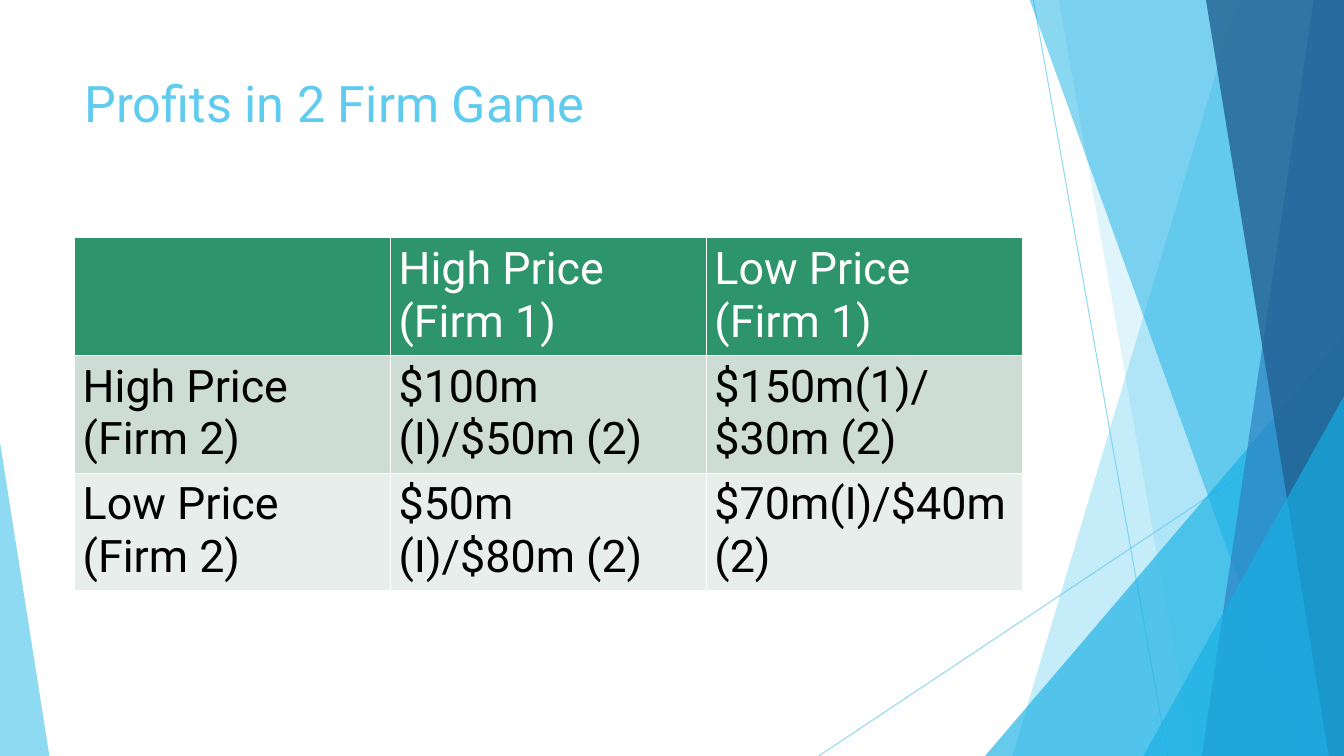
from pptx import Presentation
from pptx.dml.color import RGBColor
from pptx.enum.shapes import MSO_CONNECTOR as CONN, MSO_SHAPE as SHAPE
from pptx.enum.text import MSO_ANCHOR as ANCHOR
from pptx.oxml.ns import qn
from pptx.util import Inches, Pt
from lxml.etree import SubElement

COLORS = {
    "sky": "5FCBEF", "cyan": "17B0E4", "blue": "2E83C3", "navy": "226292",
    "header": "2E946B", "band_dark": "CDDCD4", "band_light": "E8EEEB",
    "white": "FFFFFF", "black": "000000",
}
FONT = "Roboto"
SLIDE_W, SLIDE_H = 13.33, 7.5

RAYS = [((10.25, 0), (11.58, 7.5)), ((13.33, 4.03), (8.12, 7.5))]
FACETS = [
    ("band", 12.28, 10.04, "sky", 36),
    ("band", 10.5, 11.83, "sky", 20),
    ("triangle", 9.77, 3.33, "cyan", 66),
    ("band", 10.21, 12.91, "cyan", 50),
    ("band", 13.03, 11.92, "blue", 70),
    ("band", 11.96, 13.18, "navy", 80),
    ("triangle", 11.34, 3.93, "cyan", 66),
]
PROFITS = [
    ["", "High Price (Firm 1)", "Low Price (Firm 1)"],
    ["High Price (Firm 2)", "$100m (I)/$50m (2)", "$150m(1)/$30m (2)"],
    ["Low Price (Firm 2)", "$50m (I)/$80m (2)", "$70m(I)/$40m (2)"],
]


def rgb(name):
    """Return the named palette colour."""
    return RGBColor.from_string(COLORS[name])


def set_alpha(sp, percent):
    """Set the opacity of every direct colour in a shape."""
    for clr in sp._element.iter(qn("a:srgbClr")):
        SubElement(clr, qn("a:alpha")).set("val", str(percent * 1000))


def write_text(tf, text, size=32, color="black", bold=False):
    """Write one formatted run into a text frame."""
    tf.word_wrap = True
    r = tf.paragraphs[0].add_run()
    r.text = text
    r.font.name = FONT
    r.font.size = Pt(size)
    r.font.bold = bold
    r.font.color.rgb = rgb(color)


def paint(sp, color, percent):
    """Give a shape a translucent fill without outline or shadow."""
    sp.shadow.inherit = False
    sp.fill.solid()
    sp.fill.fore_color.rgb = rgb(color)
    sp.line.fill.background()
    set_alpha(sp, percent)


def add_ray(s, start, end):
    """Draw one thin translucent line."""
    cn = s.shapes.add_connector(CONN.STRAIGHT, *map(Inches, start + end))
    cn.line.color.rgb = rgb("sky")
    cn.line.width = Pt(0.75)
    SubElement(cn._element.spPr, qn("a:effectLst"))
    set_alpha(cn, 70)


def add_band(s, top_x, bottom_x, right, top, bottom, color, percent):
    """Draw a full-height band that reaches the right edge."""
    corners = [(right, top), (right, bottom), (bottom_x, bottom)]
    fb = s.shapes.build_freeform(Inches(top_x), Inches(top))
    fb.add_line_segments([(Inches(x), Inches(y)) for x, y in corners])
    paint(fb.convert_to_shape(), color, percent)


def add_triangle(s, left, top, right, bottom, apex, color, percent):
    """Draw a triangle with its apex at a fraction of its width."""
    sp = s.shapes.add_shape(SHAPE.ISOSCELES_TRIANGLE, Inches(left), Inches(top),
                            Inches(right - left), Inches(bottom - top))
    sp.adjustments[0] = apex
    paint(sp, color, percent)


def add_backdrop(s, left, top, width, height):
    """Draw the faceted decoration at both sides of the given box."""
    right, bottom = left + width, top + height
    for (x1, y1), (x2, y2) in RAYS:
        add_ray(s, (left + x1, top + y1), (left + x2, top + y2))
    for kind, a, b, color, percent in FACETS:
        if kind == "band":
            add_band(s, left + a, left + b, right, top - 0.01, bottom, color, percent)
        else:
            add_triangle(s, left + a, top + b, right, bottom, 1, color, percent)
    add_triangle(s, left, top + 4.39, left + 0.49, bottom, 0, "sky", 70)


def add_title(s, text, left, top, width, height):
    """Place the slide title at the top of the given box."""
    tb = s.shapes.add_textbox(*map(Inches, (left, top, width, height)))
    tb.text_frame.vertical_anchor = ANCHOR.TOP
    write_text(tb.text_frame, text, size=36, color="sky")


def add_profit_table(s, rows, left, top, width, height):
    """Fill the given box with a table of equal rows and columns."""
    box = map(Inches, (left, top, width, height))
    table = s.shapes.add_table(len(rows), len(rows[0]), *box).table
    fills = ["header", "band_dark", "band_light"]
    for i, row in enumerate(rows):
        for j, text in enumerate(row):
            cell = table.cell(i, j)
            cell.fill.solid()
            cell.fill.fore_color.rgb = rgb(fills[i])
            cell.margin_left = cell.margin_right = Inches(0.08)
            cell.margin_top = cell.margin_bottom = Inches(0.05)
            if text:
                write_text(cell.text_frame, text, color="black" if i else "white")


def main():
    """Build and save the slide."""
    prs = Presentation()
    prs.slide_width, prs.slide_height = Inches(SLIDE_W), Inches(SLIDE_H)
    s = prs.slides.add_slide(prs.slide_layouts[6])
    add_backdrop(s, 0, 0, SLIDE_W, SLIDE_H)
    add_title(s, "Profits in 2 Firm Game", 0.74, 0.67, 9.4, 1.44)
    add_profit_table(s, PROFITS, 0.74, 2.36, 9.4, 3.42)
    prs.save("out.pptx")


if __name__ == "__main__":
    main()
